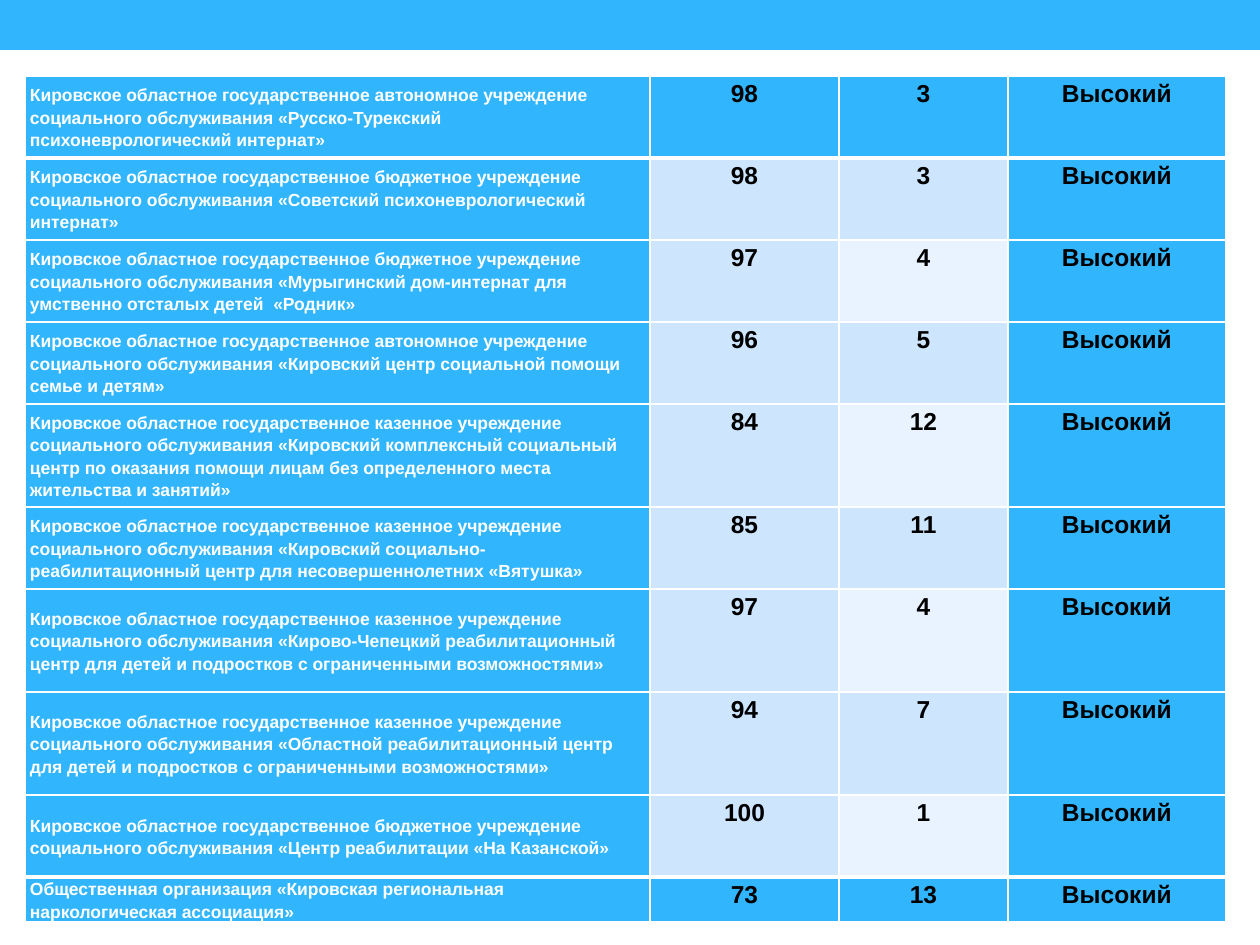
import pptx
import pptx.util
import pptx.dml.color
import pptx.enum.shapes
import pptx.enum.text
import pptx.oxml
import pptx.oxml.ns

SCALE = 914400 / 126  # EMU per px
COLORS = {
    "blue": "31B6FD",
    "mid": "CEE5FE",
    "pale": "E8F3FF",
    "white": "FFFFFF",
    "black": "000000",
}
COLS = [625, 189, 169, 218]
LOW, MID, HIGH = 43, 82, 103
STATE = "Кировское областное государственное {} учреждение социального обслуживания «{}»"
LEVEL = "Высокий"
# row height, legal form (None for a full name), name, score, rank
ROWS = [
    (MID, "автономное", "Русско-Турекский психоневрологический интернат", 98, 3),
    (MID, "бюджетное", "Советский психоневрологический интернат", 98, 3),
    (MID, "бюджетное",
     "Мурыгинский дом-интернат для умственно отсталых детей  «Родник", 97, 4),
    (MID, "автономное", "Кировский центр социальной помощи семье и детям", 96, 5),
    (HIGH, "казенное",
     "Кировский комплексный социальный центр по оказания помощи лицам "
     "без определенного места жительства и занятий", 84, 12),
    (MID, "казенное",
     "Кировский социально-реабилитационный центр для несовершеннолетних «Вятушка",
     85, 11),
    (HIGH, "казенное",
     "Кирово-Чепецкий реабилитационный центр для детей и подростков "
     "с ограниченными возможностями", 97, 4),
    (HIGH, "казенное",
     "Областной реабилитационный центр для детей и подростков "
     "с ограниченными возможностями", 94, 7),
    (MID, "бюджетное", "Центр реабилитации «На Казанской", 100, 1),
    (LOW, None,
     "Общественная организация «Кировская региональная наркологическая ассоциация»",
     73, 13),
]


def px(n):
    return pptx.util.Emu(round(n * SCALE))


def color(name):
    return pptx.dml.color.RGBColor.from_string(COLORS[name])


def add_bar(slide):
    kind = pptx.enum.shapes.MSO_SHAPE.RECTANGLE
    bar = slide.shapes.add_shape(kind, 0, 0, px(1260), px(50))
    bar.shadow.inherit = False
    bar.fill.solid()
    bar.fill.fore_color.rgb = color("blue")
    bar.line.fill.background()


def set_lines(cell, top, bottom):
    """Draw white borders; top and bottom are widths in points."""
    props = cell._tc.get_or_add_tcPr()
    for side, width in (("L", 1), ("R", 1), ("T", top), ("B", bottom)):
        props.append(pptx.oxml.parse_xml(
            f'<a:ln{side} {pptx.oxml.ns.nsdecls("a")} w="{pptx.util.Pt(width)}">'
            f'<a:solidFill><a:srgbClr val="{COLORS["white"]}"/></a:solidFill>'
            f'</a:ln{side}>'))


def set_text(cell, text, is_name):
    cell.margin_left = cell.margin_right = px(5)
    cell.margin_top = cell.margin_bottom = 0
    anchor = pptx.enum.text.MSO_ANCHOR
    cell.vertical_anchor = anchor.MIDDLE if is_name else anchor.TOP
    cell.text = text
    para = cell.text_frame.paragraphs[0]
    align = pptx.enum.text.PP_ALIGN
    para.alignment = align.LEFT if is_name else align.CENTER
    para.line_spacing = 1.15
    para.space_after = pptx.util.Pt(10)
    para.font.name = "Arial"
    para.font.bold = True
    para.font.size = pptx.util.Pt(10 if is_name else 14)
    para.font.color.rgb = color("white" if is_name else "black")


def pick_fill(row, col):
    if row in (0, len(ROWS) - 1) or col in (0, 3):
        return "blue"
    return "pale" if col == 2 and row % 2 == 0 else "mid"


def add_table(slide):
    last = len(ROWS) - 1
    height = sum(row[0] for row in ROWS)
    table = slide.shapes.add_table(
        len(ROWS), len(COLS), px(25), px(76), px(sum(COLS)), px(height)).table
    for col, width in zip(table.columns, COLS):
        col.width = px(width)
    for r, (high, form, name, score, rank) in enumerate(ROWS):
        table.rows[r].height = px(high)
        full = STATE.format(form, name) if form else name
        for c, text in enumerate([full, str(score), str(rank), LEVEL]):
            cell = table.cell(r, c)
            set_text(cell, text, c == 0)
            set_lines(cell, 3 if r in (1, last) else 1,
                      3 if r in (0, last - 1) else 1)
            cell.fill.solid()
            cell.fill.fore_color.rgb = color(pick_fill(r, c))


def main():
    deck = pptx.Presentation()
    deck.slide_width, deck.slide_height = px(1260), px(945)
    slide = deck.slides.add_slide(deck.slide_layouts[6])
    add_bar(slide)
    add_table(slide)
    deck.save("out.pptx")


if __name__ == "__main__":
    main()
